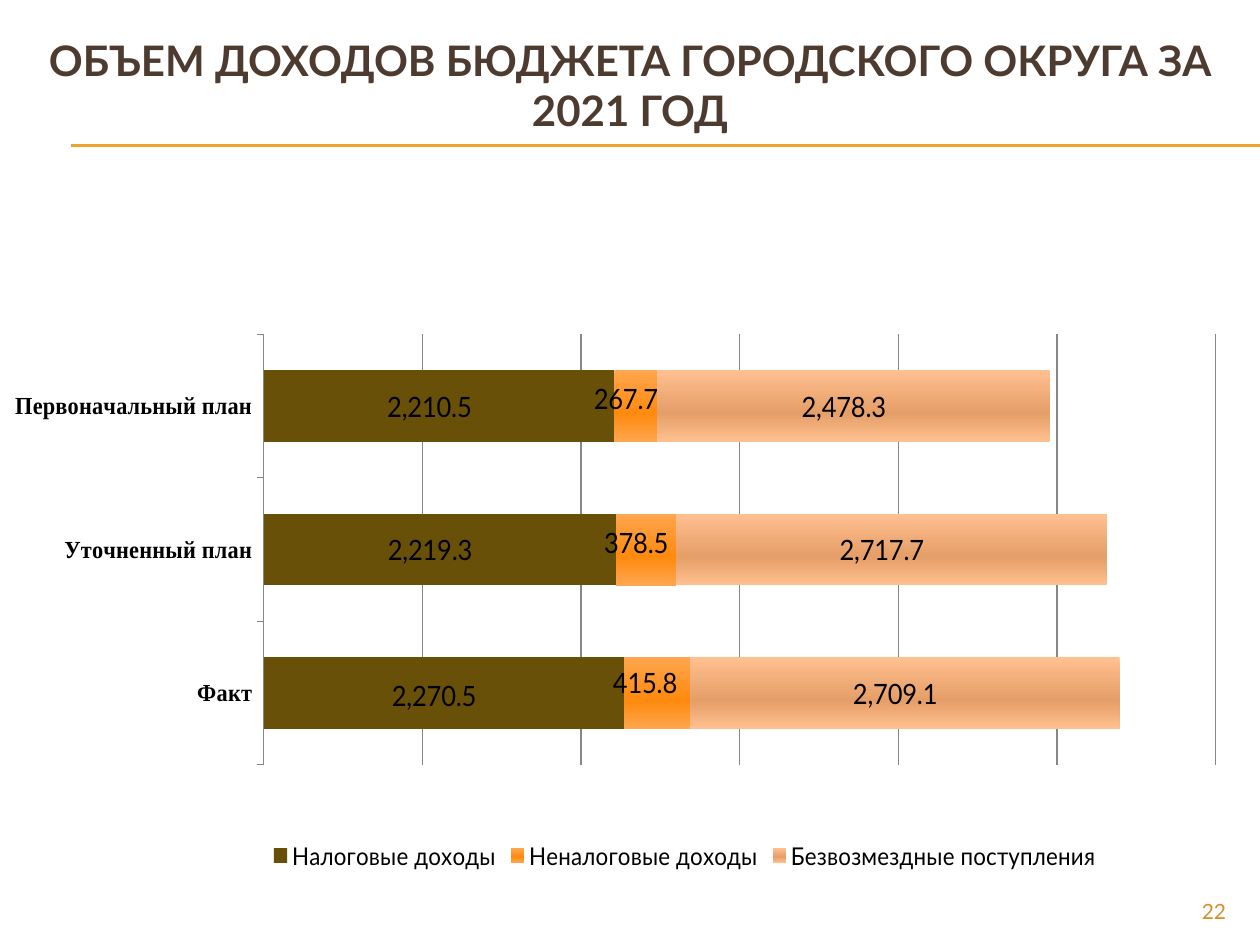
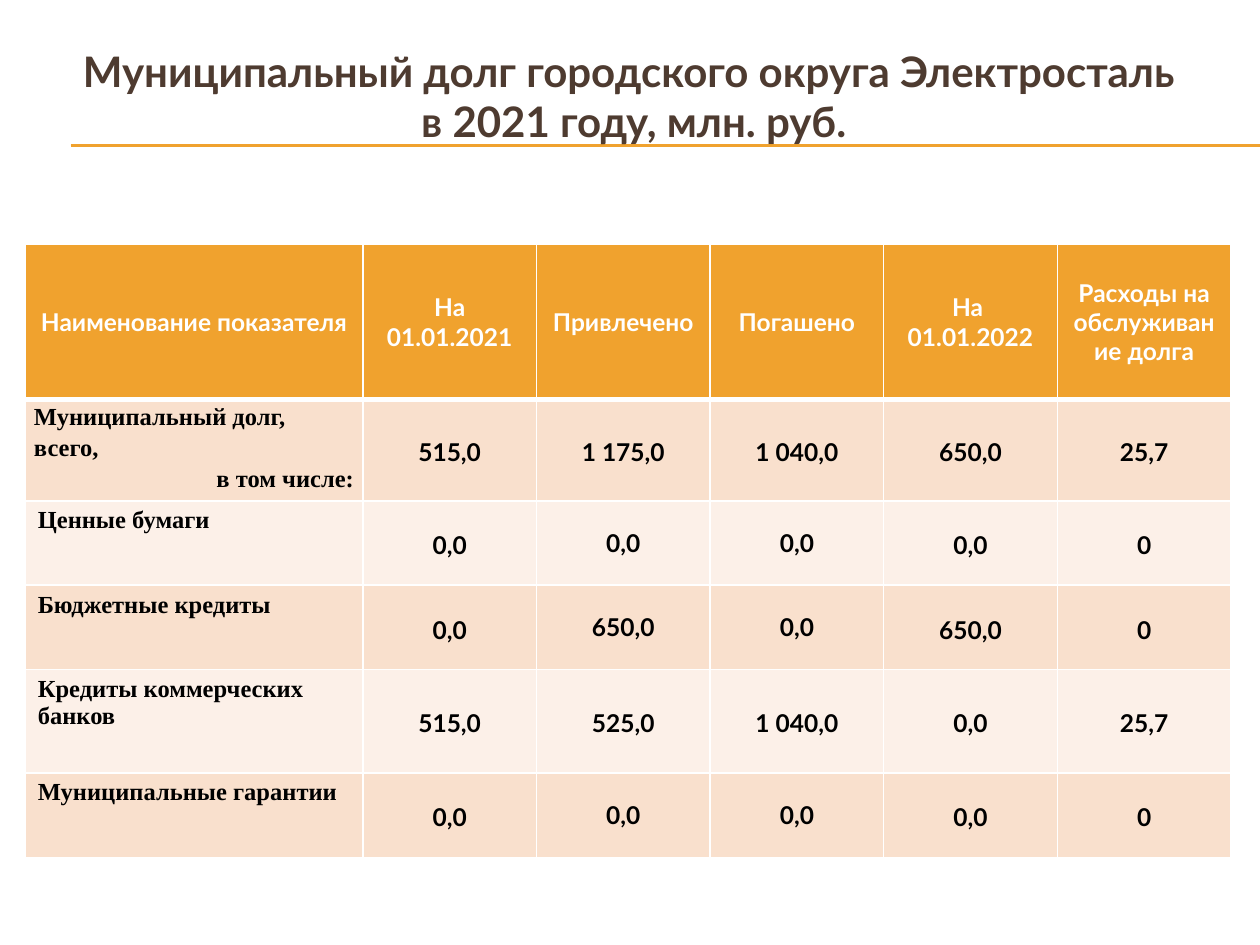
from pptx import Presentation
from pptx.chart.data import CategoryChartData
from pptx.dml.color import RGBColor
from pptx.enum.chart import XL_CHART_TYPE as ChartType, XL_LEGEND_POSITION as LegendPos
from pptx.enum.chart import XL_TICK_LABEL_POSITION as TickLabels, XL_TICK_MARK as Tick
from pptx.enum.shapes import MSO_CONNECTOR as Connector
from pptx.enum.text import MSO_ANCHOR as Anchor, PP_ALIGN as Align
from pptx.oxml import parse_xml
from pptx.oxml.ns import nsdecls
from pptx.util import Inches, Pt

COLUMNS, ROWS, CELL = 100, 75, 0.1
SANS, SERIF = "Lato", "Times New Roman"
BROWN, ORANGE, OCHRE = "4E3B30", "F0A22E", "D48F29"
WHITE, BLACK, GREY = "FFFFFF", "000000", "878787"
BANDS = ("F9E0CD", "FCF0E8")
MILLIONS = r"_-* #,##0.0\ _₽_-;\-* #,##0.0\ _₽_-"

# Name, values, fill (one colour, or edge and middle of a gradient)
INCOME = [
    ("Налоговые доходы", (2270.5, 2219.3, 2210.5), ("695008",)),
    ("Неналоговые доходы", (415.8, 378.5, 267.7), ("FFA64F", "FF8A0E")),
    ("Безвозмездные поступления", (2709.1, 2717.7, 2478.3), ("FFC090", "E59E67")),
]
STAGES = ["Факт", "Уточненный план", "Первоначальный план"]
# Series, point and label shift in percent of the chart
LABEL_SHIFTS = [(0, 0, 0, 0.3), (1, 0, -0.2, -1.6), (1, 1, 0, -1.1), (1, 2, 0, -1.2)]

DEBT_HEADER = ["Наименование показателя", "На 01.01.2021", "Привлечено", "Погашено",
               "На \n01.01.2022", "Расходы на обслуживание долга"]
DEBT = [
    ["Муниципальный долг, всего,\nв том числе:", "515,0", "1 175,0", "1 040,0", "650,0", "25,7"],
    ["Ценные бумаги", "0,0", "0,0", "0,0", "0,0", "0"],
    ["Бюджетные кредиты", "0,0", "650,0", "0,0", "650,0", "0"],
    ["Кредиты коммерческих банков", "515,0", "525,0", "1 040,0", "0,0", "25,7"],
    ["Муниципальные гарантии", "0,0", "0,0", "0,0", "0,0", "0"],
]
PLAIN_FLOW_ROWS = (2, 3, 5)


def color(hex_string):
    return RGBColor.from_string(hex_string)


def grid(*cells):
    return [Inches(n * CELL) for n in cells]


def manual_layout(x, y, width=None, height=None):
    """Chart layout element from percentages; with a size it fixes the inner plot."""
    parts = [("x", x), ("y", y)]
    modes = ""
    if width:
        parts += [("w", width), ("h", height)]
        modes = '<c:layoutTarget val="inner"/><c:xMode val="edge"/><c:yMode val="edge"/>'
    values = "".join(f'<c:{tag} val="{share / 100:.3f}"/>' for tag, share in parts)
    return parse_xml(f'<c:layout {nsdecls("c")}><c:manualLayout>{modes}{values}'
                     '</c:manualLayout></c:layout>')


def paint_series(series, edge, middle=None):
    if middle is None:
        series.format.fill.solid()
        series.format.fill.fore_color.rgb = color(edge)
        return
    stops = "".join(f'<a:gs pos="{percent * 1000}"><a:srgbClr val="{tone}"/></a:gs>'
                    for percent, tone in ((0, edge), (60, middle), (100, edge)))
    series._element.get_or_add_spPr().insert(0, parse_xml(
        f'<a:gradFill {nsdecls("a")}><a:gsLst>{stops}</a:gsLst>'
        '<a:lin ang="5400000" scaled="0"/></a:gradFill>'))


def shift_label(point, dx, dy):
    label = point.data_label
    style(label.font, 16)
    element = label._dLbl
    element.insert(1, manual_layout(dx, dy))
    number_format = parse_xml(f'<c:numFmt {nsdecls("c")} formatCode="" sourceLinked="0"/>')
    number_format.set("formatCode", MILLIONS)
    element.insert(2, number_format)


def style(font, size, tone=BLACK, bold=False, name=SANS):
    font.size, font.bold, font.name = Pt(size), bold, name
    font.color.rgb = color(tone)


class Deck:
    def __init__(self):
        self.presentation = Presentation()
        self.presentation.slide_width, self.presentation.slide_height = grid(COLUMNS, ROWS)
        self.slide = None

    def new_slide(self, title, area):
        self.slide = self.presentation.slides.add_slide(self.presentation.slide_layouts[6])
        for row in (11.5, 11.6):
            self.rule(5.6, row, COLUMNS)
        self.text(title, area, 24, BROWN, True, Align.CENTER, Anchor.MIDDLE)

    def rule(self, left, row, right):
        line = self.slide.shapes.add_connector(Connector.STRAIGHT, *grid(left, row, right, row))
        line.line.color.rgb = color(ORANGE)
        line.line.width = Pt(0.75)
        line._element.spPr.append(parse_xml(f'<a:effectLst {nsdecls("a")}/>'))

    def add_words(self, frame, text, aligns, spacing=None, **look):
        """Fill a frame; a newline starts a paragraph, a vertical tab a line."""
        for i, words in enumerate(text.split("\n")):
            paragraph = frame.add_paragraph() if i else frame.paragraphs[0]
            paragraph.alignment = aligns[min(i, len(aligns) - 1)]
            if spacing:
                paragraph.line_spacing = spacing
            for j, piece in enumerate(words.split("\v")):
                if j:
                    paragraph.add_line_break()
                run = paragraph.add_run()
                run.text = piece
                style(run.font, **look)

    def text(self, text, area, size, tone, bold, align, anchor=Anchor.TOP):
        frame = self.slide.shapes.add_textbox(*grid(*area)).text_frame
        frame.word_wrap = True
        frame.vertical_anchor = anchor
        self.add_words(frame, text, [align], size=size, tone=tone, bold=bold)

    def stacked_bars(self, area, categories, rows, plot_area, top):
        data = CategoryChartData(number_format=MILLIONS)
        data.categories = categories
        for name, values, _ in rows:
            data.add_series(name, values)
        chart = self.slide.shapes.add_chart(ChartType.BAR_STACKED, *grid(*area), data).chart
        chart.has_title = False
        style(chart.font, 18)

        plot = chart.plots[0]
        plot.gap_width, plot.overlap, plot.vary_by_categories = 100, 100, False
        for series, (_, _, fill) in zip(plot.series, rows):
            series.invert_if_negative = False
            paint_series(series, *fill)
            labels = series.data_labels
            labels.show_value = True
            labels.number_format, labels.number_format_is_linked = MILLIONS, False
            style(labels.font, 16)

        stages, amounts = chart.category_axis, chart.value_axis
        stages.major_tick_mark = Tick.OUTSIDE
        stages.tick_label_position = TickLabels.NEXT_TO_AXIS
        stages.format.line.color.rgb = color(GREY)
        style(stages.tick_labels.font, 14, bold=True, name=SERIF)
        amounts.minimum_scale, amounts.maximum_scale, amounts.major_unit = 0, top, 1000
        amounts.has_major_gridlines = True
        amounts.major_gridlines.format.line.color.rgb = color(GREY)
        amounts.visible = False

        chart.has_legend = True
        chart.legend.position, chart.legend.include_in_layout = LegendPos.BOTTOM, False
        style(chart.legend.font, 14)

        plot_element = chart._chartSpace.chart.plotArea
        for old in plot_element.findall("{*}layout"):
            plot_element.remove(old)
        plot_element.insert(0, manual_layout(*plot_area))
        return plot

    def table(self, area, widths, heights):
        table = self.slide.shapes.add_table(len(heights), len(widths), *grid(*area)).table
        table.first_row = table.horz_banding = False
        for column, width in zip(table.columns, grid(*widths)):
            column.width = width
        for row, height in zip(table.rows, grid(*heights)):
            row.height = height
        return table

    def cell(self, cell, text, fill, aligns, anchor, edges, tight, spacing, **look):
        """Edges are line widths in points: left, right, top, bottom."""
        properties = cell._tc.get_or_add_tcPr()
        for side, width in zip("LRTB", edges):
            properties.append(parse_xml(
                f'<a:ln{side} {nsdecls("a")} w="{Pt(width)}"><a:solidFill>'
                f'<a:srgbClr val="{WHITE}"/></a:solidFill></a:ln{side}>'))
        cell.fill.solid()
        cell.fill.fore_color.rgb = color(fill)
        cell.vertical_anchor = anchor
        if tight:
            cell.margin_left = cell.margin_right = Inches(0.07)
            cell.margin_top = cell.margin_bottom = 0
        self.add_words(cell.text_frame, text, aligns, spacing, size=14, bold=True, **look)


def income_slide(deck):
    deck.new_slide("ОБЪЕМ ДОХОДОВ БЮДЖЕТА ГОРОДСКОГО ОКРУГА ЗА 2021 ГОД", (0, 2.1, 100, 9.2))
    deck.text("22", (90, 70.8, 8.3, 2.7), 12, OCHRE, False, Align.RIGHT)
    plot = deck.stacked_bars((1.2, 17.8, 97.6, 51.7), STAGES, INCOME,
                             (12.4, 16.9, 85, 66.1), 6000)
    for series, point, dx, dy in LABEL_SHIFTS:
        shift_label(plot.series[series].points[point], dx, dy)


def debt_slide(deck):
    deck.new_slide("Муниципальный долг городского округа Электросталь \vв 2021 году, млн. руб.",
                   (2, 1.3, 96.6, 12.6))
    table = deck.table((2, 19.4, 95.7, 48.3), [26.8] + [13.78] * 5,
                       [12.3, 7.6, 6.7, 6.7, 8.2, 6.7])
    for c, heading in enumerate(DEBT_HEADER):
        deck.cell(table.cell(0, c), heading, ORANGE, [Align.CENTER], Anchor.MIDDLE,
                  (1, 1, 1, 3), False, None, tone=WHITE)
    for r, values in enumerate(DEBT, 1):
        edges = (1, 1, 3 if r == 1 else 1, 1)
        for c, value in enumerate(values):
            is_name = c == 0
            tight = r == 1 if is_name else not (r in PLAIN_FLOW_ROWS and c in (2, 3))
            deck.cell(table.cell(r, c), value, BANDS[(r - 1) % 2],
                      [Align.LEFT, Align.RIGHT] if is_name else [Align.CENTER],
                      Anchor.TOP if is_name else Anchor.MIDDLE, edges, tight,
                      1.15 if tight else None, name=SERIF if is_name else SANS)


def main():
    deck = Deck()
    income_slide(deck)
    debt_slide(deck)
    deck.presentation.save("out.pptx")


if __name__ == "__main__":
    main()
